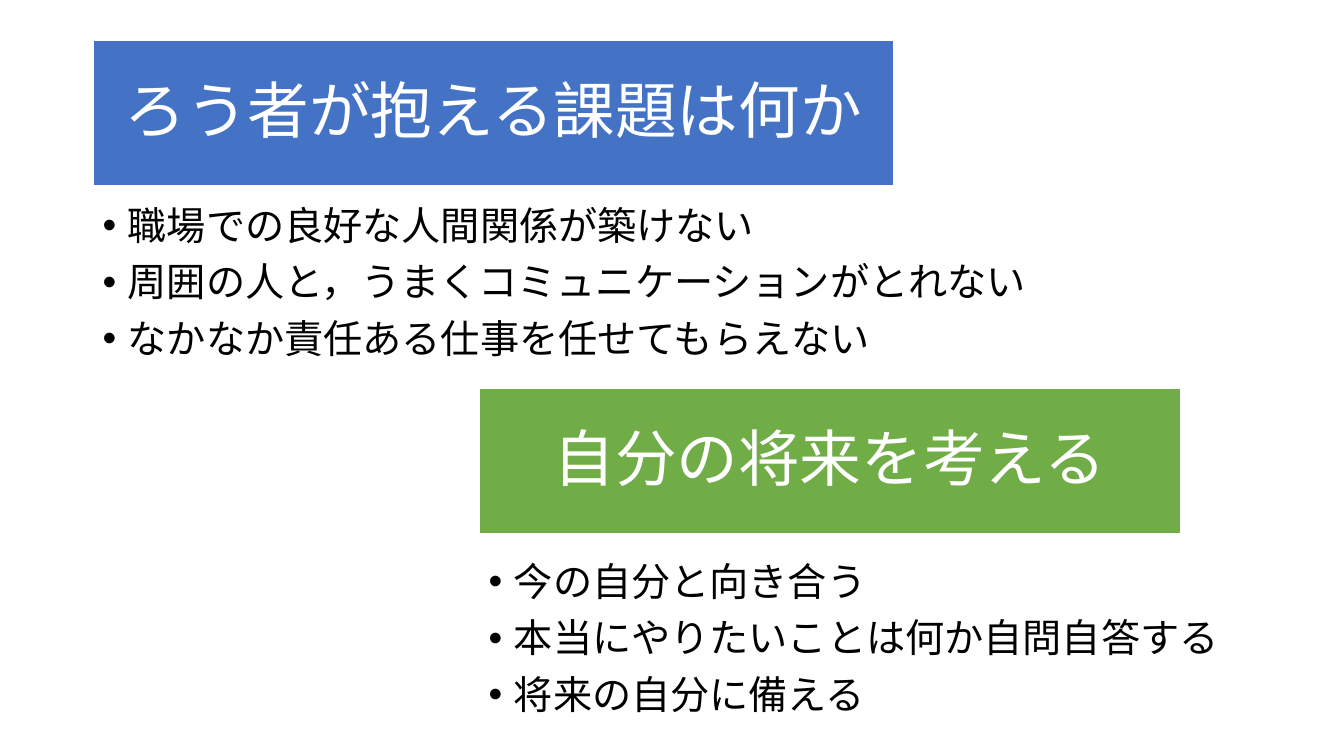
from lxml import etree
from pptx import Presentation
from pptx.dml.color import RGBColor
from pptx.enum.shapes import MSO_SHAPE
from pptx.enum.text import MSO_ANCHOR, MSO_AUTO_SIZE, PP_ALIGN
from pptx.oxml.ns import qn
from pptx.util import Pt

RECTANGLE = MSO_SHAPE.RECTANGLE
TOP, MIDDLE = MSO_ANCHOR.TOP, MSO_ANCHOR.MIDDLE
LEFT, CENTER = PP_ALIGN.LEFT, PP_ALIGN.CENTER
NO_AUTOFIT = MSO_AUTO_SIZE.NONE

COLORS = {
    "blue": "4472C4",
    "green": "70AD47",
    "white": "FFFFFF",
    "black": "000000",
}
FONT = "Calibri"
INDENT = 18
HEADING_HEIGHT = 104.4
LIST_HEIGHT = 142.5


def rgb(name):
    return RGBColor.from_string(COLORS[name])


def add_bullet(para):
    properties = para._p.get_or_add_pPr()
    properties.set("marL", str(Pt(INDENT)))
    properties.set("indent", str(-Pt(INDENT)))
    etree.SubElement(properties, qn("a:buFont"), typeface="Arial")
    etree.SubElement(properties, qn("a:buChar"), char="•")


def write(shape, lines, size, color, align=LEFT, anchor=TOP, before=0, bullets=False):
    frame = shape.text_frame
    frame.word_wrap = True
    frame.auto_size = NO_AUTOFIT
    frame.vertical_anchor = anchor
    frame.margin_left = frame.margin_right = Pt(7.2)
    frame.margin_top = frame.margin_bottom = Pt(3.6)
    for index, line in enumerate(lines):
        para = frame.add_paragraph() if index else frame.paragraphs[0]
        para.alignment = align
        para.line_spacing = 0.9
        para.space_before = Pt(before)
        if bullets:
            add_bullet(para)
        span = para.add_run()
        span.text = line
        span.font.name = FONT
        span.font.size = Pt(size)
        span.font.color.rgb = rgb(color)


def format_heading(shape, text, fill):
    shape.fill.solid()
    shape.fill.fore_color.rgb = rgb(fill)
    shape.line.color.rgb = rgb("white")
    shape.line.width = Pt(1.5)
    write(shape, [text], size=44, color="white", align=CENTER, anchor=MIDDLE)


def add_section(page, box, text, fill, lines, list_width, gap, is_title=False):
    """Place a coloured heading in box (left, top, width) and its list below."""
    left, top, width = box
    if is_title:
        heading = page.shapes.title
        heading.left, heading.top = Pt(left), Pt(top)
        heading.width, heading.height = Pt(width), Pt(HEADING_HEIGHT)
    else:
        heading = page.shapes.add_shape(
            RECTANGLE, Pt(left), Pt(top), Pt(width), Pt(HEADING_HEIGHT))
        heading.shadow.inherit = False
    format_heading(heading, text, fill)
    list_top = top + HEADING_HEIGHT + gap
    points = page.shapes.add_textbox(
        Pt(left), Pt(list_top), Pt(list_width), Pt(LIST_HEIGHT))
    write(points, lines, size=28, color="black", before=10, bullets=True)


def main():
    deck = Presentation()
    deck.slide_width, deck.slide_height = Pt(960), Pt(540)
    page = deck.slides.add_slide(deck.slide_layouts.get_by_name("Title Only"))
    add_section(
        page, (66.25, 28.8, 572.4), "ろう者が抱える課題は何か", "blue",
        ["職場での良好な人間関係が築けない",
         "周囲の人と，うまくコミュニケーションがとれない",
         "なかなか責任ある仕事を任せてもらえない"],
        list_width=828, gap=10.8, is_title=True)
    add_section(
        page, (342, 277.2, 501.8), "自分の将来を考える", "green",
        ["今の自分と向き合う",
         "本当にやりたいことは何か自問自答する",
         "将来の自分に備える"],
        list_width=560.2, gap=16.6)
    deck.save("out.pptx")


if __name__ == "__main__":
    main()
